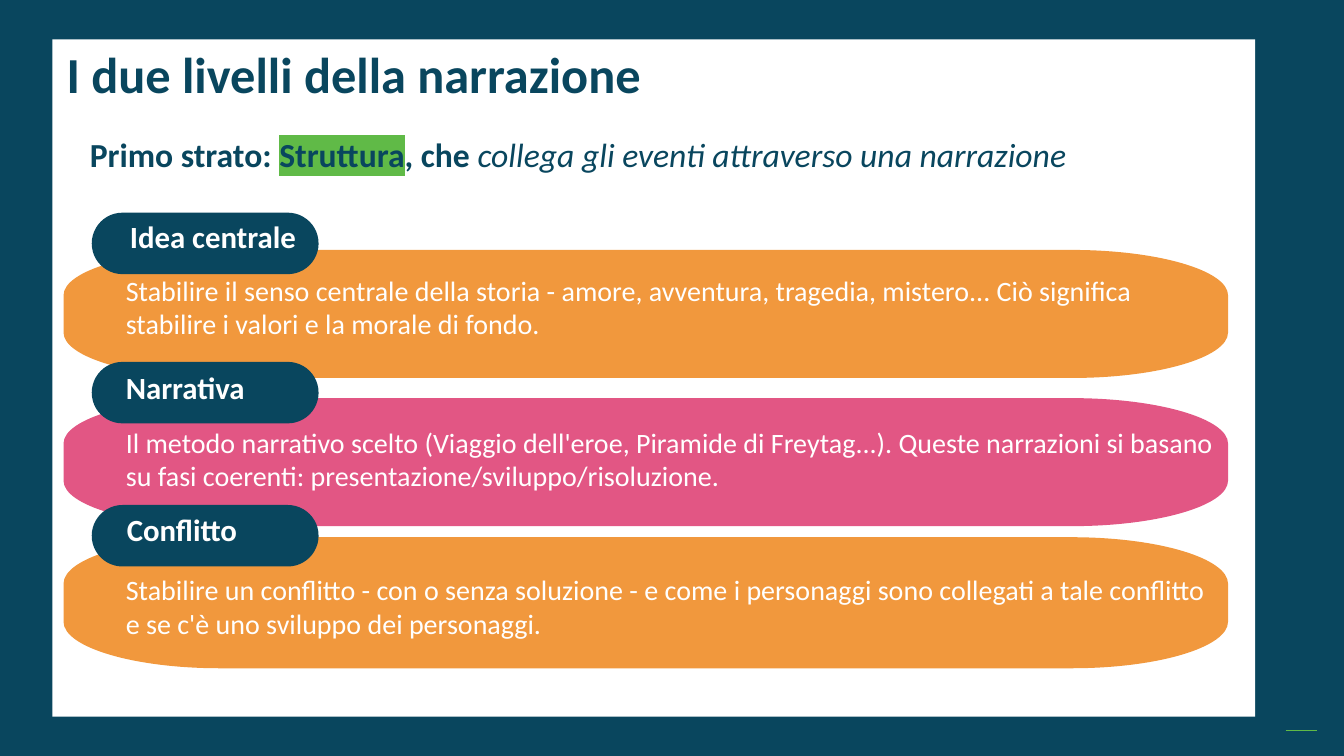
from dataclasses import dataclass

from lxml import etree
from pptx import Presentation
from pptx import util as u
from pptx.dml.color import RGBColor
from pptx.enum import shapes, text
from pptx.oxml.ns import qn
from pptx.shapes.autoshape import Shape
from pptx.slide import Slide
from pptx.text.text import Font, TextFrame


@dataclass(frozen=True)
class Theme:
    font: str = "Calibri"
    navy: str = "09465E"
    white: str = "FFFFFF"
    green: str = "60BA47"
    orange: str = "F1983D"
    pink: str = "E25684"
    title_size: int = 36
    lead_size: int = 24
    label_size: int = 22
    text_size: int = 20


@dataclass(frozen=True)
class Box:
    left: float
    top: float
    width: float
    height: float

    def lengths(self) -> tuple[u.Length, ...]:
        return tuple(u.Inches(n) for n in (self.left, self.top, self.width, self.height))


@dataclass(frozen=True)
class Level:
    label: str
    description: str
    color: str
    panel: Box
    tag_top: float
    label_left: float
    label_top: float
    description_top: float
    description_width: float = 11.03


THEME = Theme()
PANEL_LEFT, PANEL_WIDTH, PANEL_RADIUS = 0.63, 11.55, 1.55
CURVE_PULL = 0.55

LEVELS = [
    Level(
        "Idea centrale",
        "Stabilire il senso centrale della storia - amore, avventura, tragedia, mistero... "
        "Ciò significa stabilire i valori e la morale di fondo.",
        THEME.orange, Box(PANEL_LEFT, 2.48, PANEL_WIDTH, 1.27), 2.11, 1.19, 2.11, 2.66, 10.97,
    ),
    Level(
        "Narrativa",
        "Il metodo narrativo scelto (Viaggio dell'eroe, Piramide di Freytag...). "
        "Queste narrazioni si basano su fasi coerenti: presentazione/sviluppo/risoluzione.",
        THEME.pink, Box(PANEL_LEFT, 3.95, PANEL_WIDTH, 1.27), 3.59, 1.15, 3.61, 4.17,
    ),
    Level(
        "Conflitto",
        "Stabilire un conflitto - con o senza soluzione - e come i personaggi sono collegati "
        "a tale conflitto e se c'è uno sviluppo dei personaggi.",
        THEME.orange, Box(PANEL_LEFT, 5.33, PANEL_WIDTH, 1.3), 5.01, 1.16, 5.02, 5.63,
    ),
]


def style_font(font: Font, size: int, color: str, bold: bool = False) -> None:
    font.name = THEME.font
    font.size = u.Pt(size)
    font.bold = bold
    font.color.rgb = RGBColor.from_string(color)


def paint(shape: Shape, color: str) -> None:
    shape.shadow.inherit = False
    shape.fill.solid()
    shape.fill.fore_color.rgb = RGBColor.from_string(color)
    shape.line.fill.background()


def add_block(slide: Slide, kind: shapes.MSO_SHAPE, box: Box, color: str) -> Shape:
    block = slide.shapes.add_shape(kind, *box.lengths())
    paint(block, color)
    return block


def round_corners(panel: Shape) -> None:
    points = list(panel.element.iter(qn("a:pt")))
    corners = list(panel.element.iter(qn("a:lnTo")))[1::2]
    positions = [(int(point.get("x")), int(point.get("y"))) for point in points]
    for index, corner in enumerate(corners):
        start, end = positions[2 * index + 1], positions[2 * index + 2]
        tip = (start[0], end[1]) if index % 2 else (end[0], start[1])
        curve = etree.Element(qn("a:cubicBezTo"))
        for anchor in (start, end):
            x, y = (round(a + CURVE_PULL * (t - a)) for a, t in zip(anchor, tip))
            etree.SubElement(curve, qn("a:pt"), x=str(x), y=str(y))
        etree.SubElement(curve, qn("a:pt"), x=str(end[0]), y=str(end[1]))
        corner.getparent().replace(corner, curve)


def add_panel(slide: Slide, box: Box, color: str) -> None:
    left, top, width, height = box.lengths()
    right, bottom = left + width, top + height
    radius_x, radius_y = u.Inches(PANEL_RADIUS), round(height * 0.355)
    start = (right - radius_x, bottom)
    builder = slide.shapes.build_freeform(*start)
    builder.add_line_segments([
        (left + radius_x, bottom), (left, bottom - radius_y),
        (left, top + radius_y), (left + radius_x, top),
        (right - radius_x, top), (right, top + radius_y),
        (right, bottom - radius_y), start,
    ], close=True)
    panel = builder.convert_to_shape()
    round_corners(panel)
    paint(panel, color)


def add_text(slide: Slide, box: Box, words: str, size: int, bold: bool = False) -> None:
    frame = slide.shapes.add_textbox(*box.lengths()).text_frame
    frame.word_wrap = True
    frame.text = words
    style_font(frame.paragraphs[0].font, size, THEME.white, bold)


def place(placeholder: Shape, box: Box) -> TextFrame:
    placeholder.left, placeholder.top, placeholder.width, placeholder.height = box.lengths()
    frame = placeholder.text_frame
    frame.word_wrap = True
    frame.auto_size = text.MSO_AUTO_SIZE.NONE
    frame.vertical_anchor = text.MSO_ANCHOR.TOP
    return frame


def fill_title(slide: Slide) -> None:
    frame = place(slide.shapes.title, Box(0.56, 0.45, 10.99, 0.88))
    frame.text = "I due livelli della narrazione"
    paragraph = frame.paragraphs[0]
    paragraph.alignment = text.PP_ALIGN.LEFT
    paragraph.line_spacing = 0.9
    style_font(paragraph.font, THEME.title_size, THEME.navy, True)


def fill_lead(slide: Slide) -> None:
    paragraph = place(slide.placeholders[1], Box(0.79, 1.33, 11.08, 0.48)).paragraphs[0]
    paragraph.line_spacing = u.Pt(24.8)
    paragraph.space_before = u.Pt(0)
    properties = paragraph._p.get_or_add_pPr()
    properties.set("marL", str(u.Inches(0.25)))
    properties.set("indent", str(u.Inches(-0.25)))
    etree.SubElement(properties, qn("a:buNone"))
    style_font(paragraph.font, THEME.lead_size, THEME.navy)
    for words in ("Primo strato: ", "Struttura", ", che "):
        run = paragraph.add_run()
        run.text = words
        run.font.bold = True
        if words == "Struttura":
            highlight = etree.SubElement(run.font._element, qn("a:highlight"))
            etree.SubElement(highlight, qn("a:srgbClr"), val=THEME.green)
    ending = paragraph.add_run()
    ending.text = "collega gli eventi attraverso una narrazione"
    ending.font.italic = True


def add_backdrop(slide: Slide) -> None:
    border = add_block(slide, shapes.MSO_SHAPE.RECTANGLE, Box(0, 0, 13.33, 7.5), THEME.navy)
    page = add_block(slide, shapes.MSO_SHAPE.RECTANGLE, Box(0.52, 0.39, 11.93, 6.72), THEME.white)
    ends = [u.Inches(n) for n in (12.75, 7.25, 13.06, 7.25)]
    dash = slide.shapes.add_connector(shapes.MSO_CONNECTOR.STRAIGHT, *ends)
    dash.line.width = u.Pt(1)
    dash.line.color.rgb = RGBColor.from_string(THEME.green)
    etree.SubElement(dash._element.spPr, qn("a:effectLst"))
    for shape in (border, page, dash):
        slide.shapes.title.element.addprevious(shape.element)


def add_level(slide: Slide, level: Level) -> None:
    add_panel(slide, level.panel, level.color)
    tag_box = Box(0.91, level.tag_top, 2.25, 0.61)
    tag = add_block(slide, shapes.MSO_SHAPE.ROUNDED_RECTANGLE, tag_box, THEME.navy)
    tag.adjustments[0] = 0.5
    label_box = Box(level.label_left, level.label_top, 2.25, 0.47)
    add_text(slide, label_box, level.label, THEME.label_size, True)
    description_box = Box(1.15, level.description_top, level.description_width, 0.77)
    add_text(slide, description_box, level.description, THEME.text_size)


def main() -> None:
    presentation = Presentation()
    presentation.slide_width, presentation.slide_height = u.Inches(13.33), u.Inches(7.5)
    slide = presentation.slides.add_slide(presentation.slide_layouts[1])
    add_backdrop(slide)
    fill_title(slide)
    fill_lead(slide)
    for level in LEVELS:
        add_level(slide, level)
    presentation.save("out.pptx")


if __name__ == "__main__":
    main()
